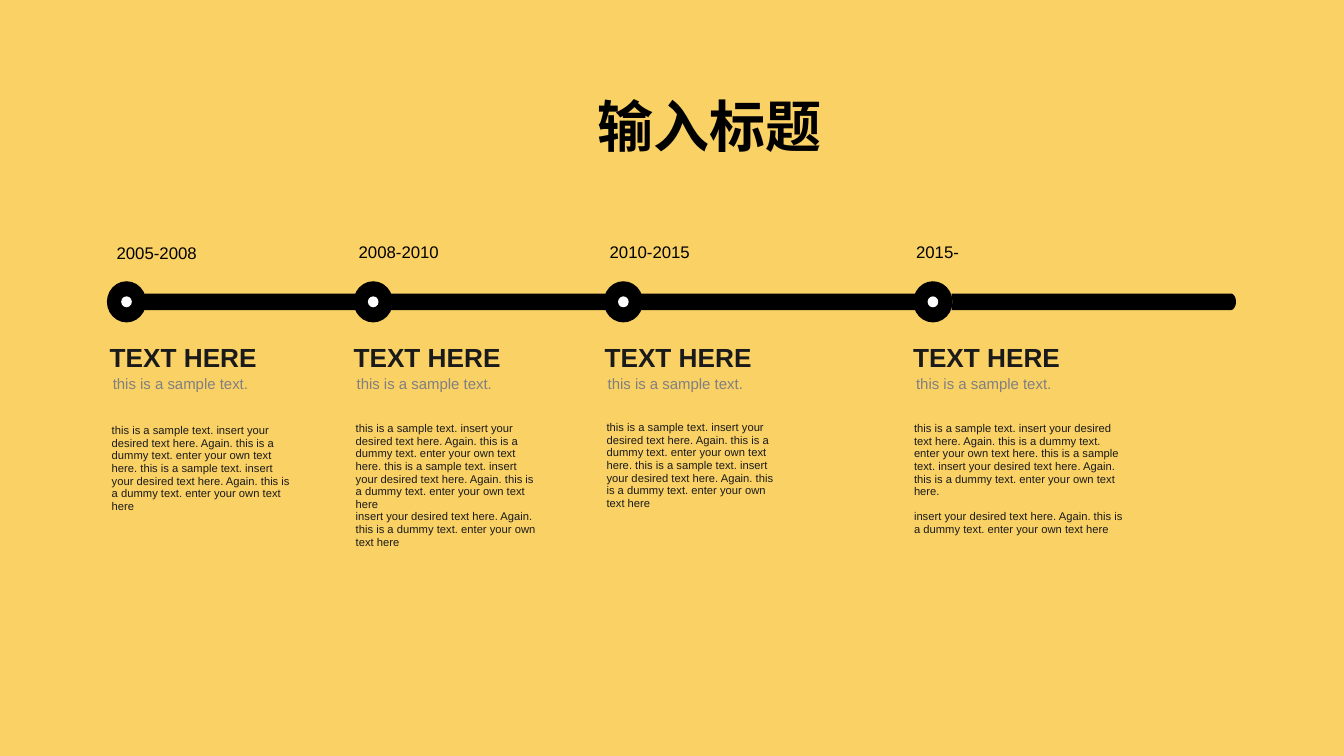
from dataclasses import dataclass
from math import cos, pi, sin

from lxml.etree import SubElement
from pptx import Presentation
from pptx.dml.color import RGBColor
from pptx.enum.shapes import MSO_SHAPE
from pptx.enum.text import MSO_ANCHOR, MSO_AUTO_SIZE, PP_ALIGN
from pptx.oxml.ns import qn
from pptx.util import Pt

WIDE, HIGH = 960, 540
AXIS = 215.6
YELLOW, BLACK, WHITE = "FAD165", "000000", "FFFFFF"
DARK, GREY = "1A1A1A", "808080"

ASK = "insert your desired text here. Again. this is a dummy text. enter your own text here"
SAMPLE = f"this is a sample text. {ASK}. this is a sample text. {ASK}"


@dataclass
class Box:
    left: float
    top: float
    width: float
    height: float

    def lengths(self) -> list:
        return [Pt(v) for v in (self.left, self.top, self.width, self.height)]


@dataclass
class Style:
    size: float
    color: str
    bold: bool = False
    name: str = "Arial"


@dataclass
class Stop:
    years: str
    ring: float
    date: Box
    text: float
    body: Box
    paras: list
    gap: float = 0


DATE = Style(12, BLACK)
HEAD = Style(18.7, DARK, True)
SUB = Style(10.7, GREY)
BODY = Style(8, DARK)
TITLE = Style(40, BLACK, True, "Noto Sans CJK SC")

STOPS = [
    Stop("2005-2008", 76.4, Box(76.2, 169.9, 72, 21.6), 71.3,
         Box(72.7, 299.5, 143.3, 70.6), [SAMPLE]),
    Stop("2008-2010", 252.6, Box(249.1, 169.2, 72, 21.6), 245.5,
         Box(247, 298.1, 143.3, 97.9), [SAMPLE, ASK]),
    Stop("2010-2015", 431.3, Box(428.4, 169.2, 72, 21.6), 424.8,
         Box(426.2, 297.4, 136.8, 70.6), [SAMPLE]),
    Stop("2015-", 652.4, Box(647.3, 169.2, 45.4, 21.6), 645.1,
         Box(645.8, 298.1, 166.3, 89.3), [SAMPLE + ".", ASK], 9),
]


def paint(format, color: str) -> None:
    """Set a fill or a font to a solid colour."""
    if hasattr(format, "solid"):
        format.solid()
        format.fore_color.rgb = RGBColor.from_string(color)
    else:
        format.color.rgb = RGBColor.from_string(color)


def plain(shape, color: str):
    paint(shape.fill, color)
    shape.line.fill.background()
    shape.shadow.inherit = False
    return shape


def put(shapes, kind: MSO_SHAPE, box: Box, color: str):
    return plain(shapes.add_shape(kind, *box.lengths()), color)


def write(shape, paras: list, style: Style, wrap: bool, **format) -> None:
    """Fill a text frame, giving each paragraph the same format."""
    frame = shape.text_frame
    frame.word_wrap = wrap
    frame.text = "\n".join(paras)
    look = {"size": Pt(style.size), "bold": style.bold, "name": style.name}
    for para in frame.paragraphs:
        for key, value in format.items():
            setattr(para, key, value)
        for run in para.runs:
            for key, value in look.items():
                setattr(run.font, key, value)
            paint(run.font, style.color)


def label(shapes, box: Box, paras: list, style: Style, wrap: bool = False, **format):
    shape = shapes.add_textbox(*box.lengths())
    write(shape, paras, style, wrap, **format)
    shape.text_frame.auto_size = MSO_AUTO_SIZE.SHAPE_TO_FIT_TEXT
    return shape


def bar(shapes, flat: float, cap: float, bulge: float, notch: float = 0) -> None:
    """Draw a bar from a flat end to a round cap that bulges outwards."""
    half, steps = 5.9, 12
    turns = [pi * i / steps - pi / 2 for i in range(steps + 1)]
    dots = [(cap + bulge * cos(a), AXIS + half * sin(a)) for a in turns]
    dots += [(flat, AXIS + half), (flat + notch, AXIS)]
    pen = shapes.build_freeform(Pt(flat), Pt(AXIS - half))
    pen.add_line_segments([(Pt(x), Pt(y)) for x, y in dots])
    plain(pen.convert_to_shape(), BLACK)


def oval(shapes, mid: float, width: float, height: float, color: str) -> None:
    box = Box(mid - width / 2, AXIS - height / 2, width, height)
    put(shapes, MSO_SHAPE.OVAL, box, color)


def column(shapes, stop: Stop) -> None:
    """Draw the heading, subheading and body under one stop."""
    group = shapes.add_group_shape().shapes
    label(group, Box(stop.text, 240.5, 120.2, 30.2), ["TEXT HERE"], HEAD)
    label(group, Box(stop.text + 2.2, 264.2, 115.2, 20.2), ["this is a sample text."], SUB)
    body = label(group, stop.body, stop.paras, BODY, True, line_spacing=Pt(9))
    body.text_frame.paragraphs[-1].space_before = Pt(stop.gap)


def head(slide) -> None:
    title = slide.shapes.title
    box = Box(419.8, 74.9, 316.1, 87.8)
    for key, value in zip(("left", "top", "width", "height"), box.lengths()):
        setattr(title, key, value)
    write(title, ["输入标题"], TITLE, True, line_spacing=0.7, alignment=PP_ALIGN.LEFT)
    title.text_frame.vertical_anchor = MSO_ANCHOR.TOP
    title.text_frame.auto_size = MSO_AUTO_SIZE.NONE
    props = title.text_frame.paragraphs[0].runs[0].font
    latin = title.element.find(".//" + qn("a:latin"))
    SubElement(latin.getparent(), qn("a:ea"), typeface=props.name)
    title.element.getparent().append(title.element)


def main() -> None:
    deck = Presentation()
    deck.slide_width, deck.slide_height = Pt(WIDE), Pt(HIGH)
    slide = deck.slides.add_slide(deck.slide_layouts[5])
    shapes = slide.shapes

    back = put(shapes, MSO_SHAPE.RECTANGLE, Box(0, 0, WIDE, HIGH), YELLOW)
    paint(back.line.fill, YELLOW)
    back.line.width = Pt(1)

    bar(shapes, 679.7, 879.2, 3.7, 0.7)
    bar(shapes, 666, 87.8, -4.3)
    for stop in reversed(STOPS):
        mid = stop.ring + 14
        oval(shapes, mid, 28, 29.4, BLACK)
        oval(shapes, mid, 7.6, 7.8, WHITE)
    for stop in STOPS:
        label(shapes, stop.date, [stop.years], DATE)
    for stop in STOPS:
        column(shapes, stop)
    head(slide)
    deck.save("out.pptx")


if __name__ == "__main__":
    main()
